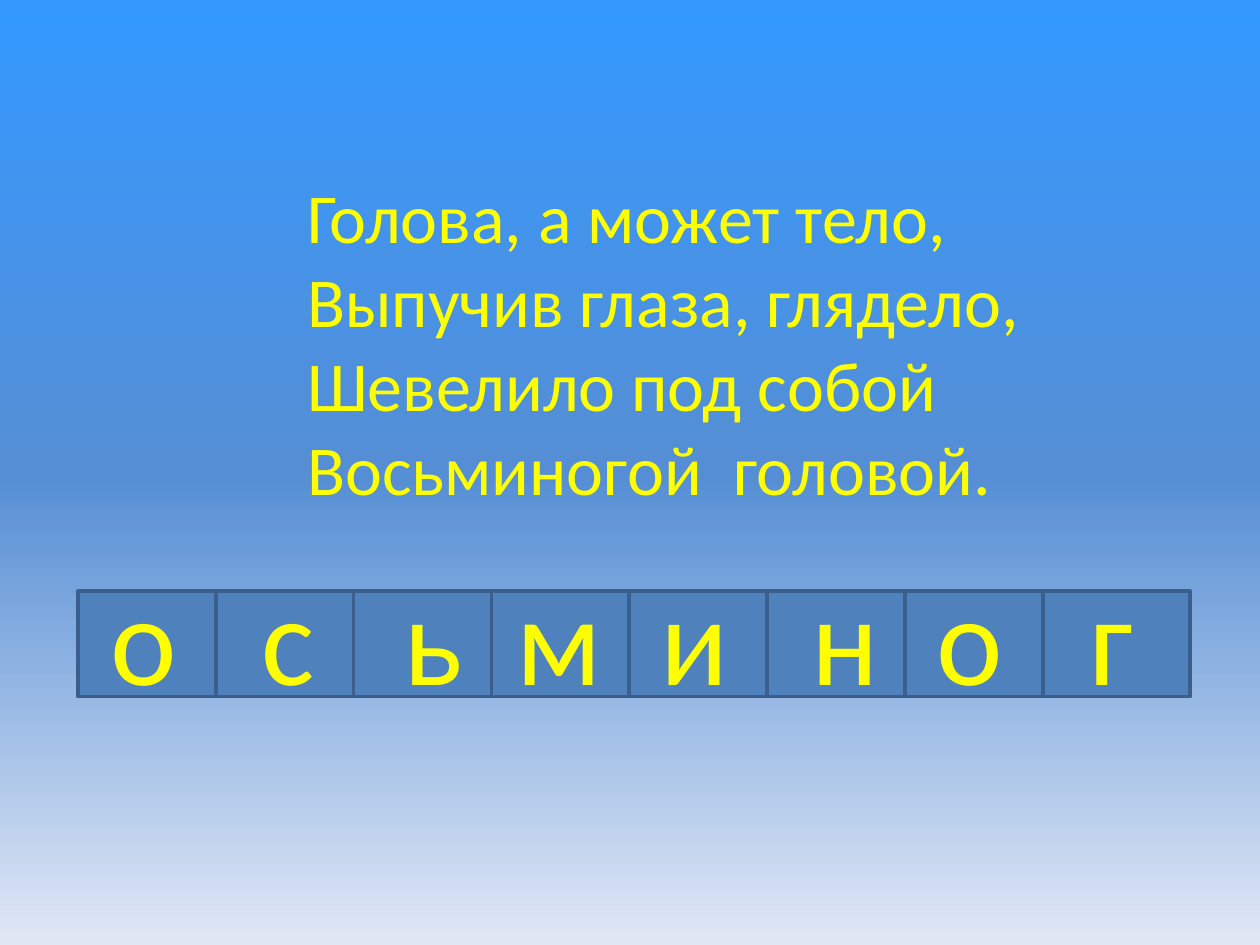
from copy import deepcopy

from lxml import etree
from pptx import Presentation
from pptx import util as u
from pptx.dml.color import RGBColor
from pptx.enum import shapes, text
from pptx.oxml.ns import qn

YELLOW = RGBColor(0xFF, 0xFF, 0x00)
CELL_BLUE = RGBColor(0x4F, 0x81, 0xBD)
CELL_EDGE = RGBColor(0x3A, 0x5F, 0x8C)
SKY = [
    (0, RGBColor(0x33, 0x99, 0xFF)),
    (0.5, RGBColor(0x55, 0x8E, 0xD5)),
    (1, RGBColor(0xE1, 0xE8, 0xF5)),
]


def add_lines(slide, lines, left, top, width, height, size):
    box = slide.shapes.add_textbox(
        u.Inches(left), u.Inches(top), u.Inches(width), u.Inches(height)
    )
    frame = box.text_frame
    frame.word_wrap = True
    frame.auto_size = text.MSO_AUTO_SIZE.SHAPE_TO_FIT_TEXT
    frame.text = "\n".join(lines)
    for paragraph in frame.paragraphs:
        font = paragraph.runs[0].font
        font.name = "Calibri"
        font.size = u.Pt(size)
        font.color.rgb = YELLOW
    return frame


prs = Presentation()
prs.slide_width = u.Inches(10)
prs.slide_height = u.Inches(7.5)
slide = prs.slides.add_slide(prs.slide_layouts[6])

sky = slide.background.fill
sky.gradient()
sky.gradient_angle = 270
stops = next(slide.background._cSld.iter(qn("a:gsLst")))
stops.insert(1, deepcopy(stops[0]))
for stop, (position, color) in zip(sky.gradient_stops, SKY):
    stop.position = position
    stop.color.rgb = color

riddle = [
    "Голова, а может тело,",
    "Выпучив глаза, глядело,",
    "Шевелило под собой",
    "Восьминогой  головой.",
]
add_lines(slide, riddle, left=2.34, top=1.33, width=6.64, height=2.79, size=40)

answer = "осьминог"
cell_step = 8.75 / len(answer)
cells = slide.shapes.add_group_shape()
for i in range(len(answer)):
    cell_width = 1.17 if i == len(answer) - 1 else cell_step
    cell = cells.shapes.add_shape(
        shapes.MSO_SHAPE.RECTANGLE,
        u.Inches(0.62 + i * cell_step),
        u.Inches(4.69),
        u.Inches(cell_width),
        u.Inches(0.84),
    )
    cell.shadow.inherit = False
    cell.fill.solid()
    cell.fill.fore_color.rgb = CELL_BLUE
    cell.line.color.rgb = CELL_EDGE
    cell.line.width = u.Pt(2)

letters = add_lines(
    slide, ["\t".join(answer)], left=0.78, top=4.39, width=8.59, height=1.31, size=72
)
tabs = etree.SubElement(letters.paragraphs[0]._p.get_or_add_pPr(), qn("a:tabLst"))
for letter_center in (1.41, 2.56, 3.56, 4.63, 5.83, 6.82, 7.94):
    etree.SubElement(
        tabs, qn("a:tab"), pos=str(u.Inches(letter_center)), algn="ctr"
    )

prs.save("out.pptx")
